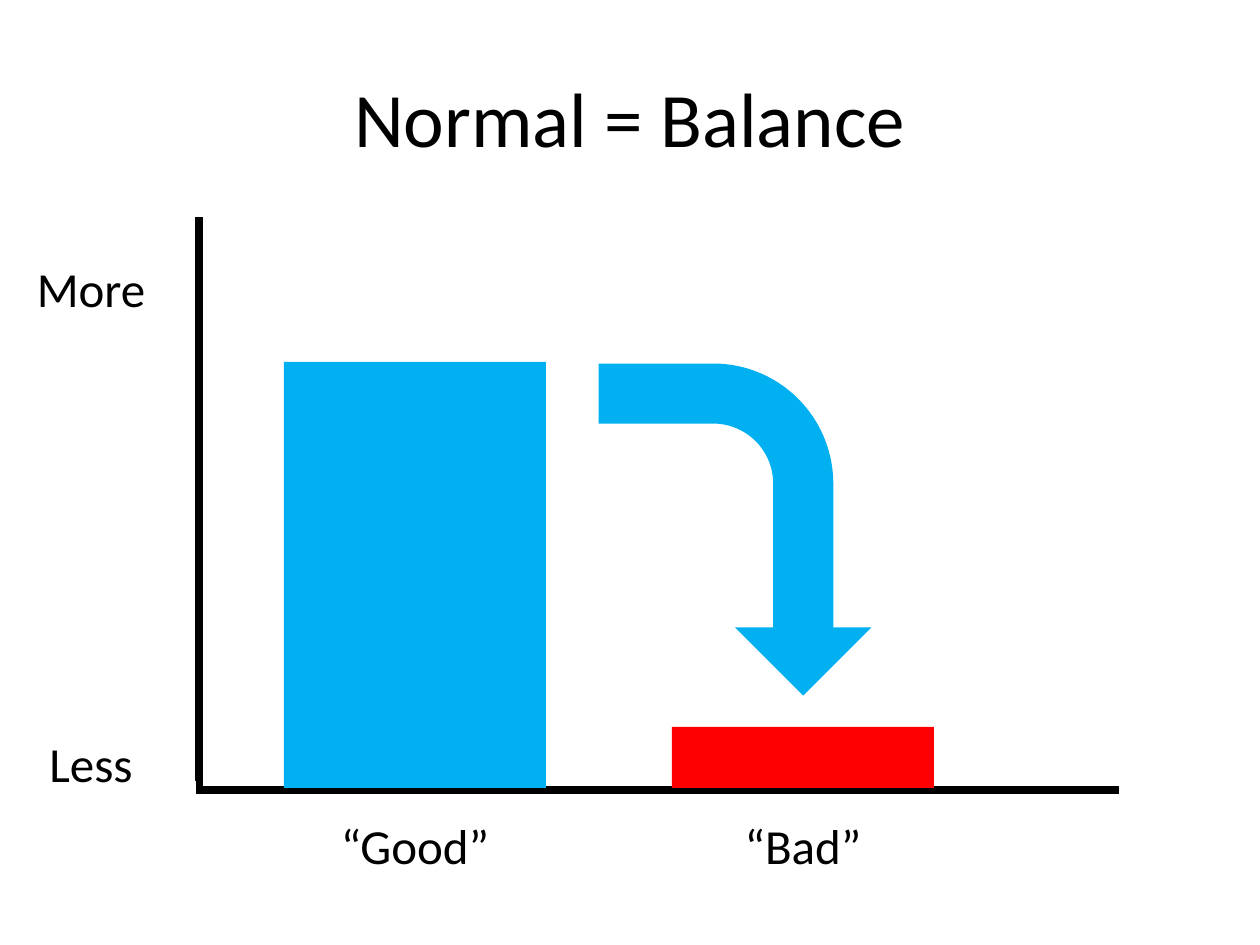
from lxml.etree import SubElement
from pptx import Presentation
from pptx.dml.color import RGBColor
from pptx.enum.shapes import MSO_CONNECTOR, MSO_SHAPE
from pptx.enum.text import MSO_ANCHOR, MSO_AUTO_SIZE, PP_ALIGN
from pptx.oxml.ns import qn
from pptx.util import Inches, Pt

COLORS = {"ink": "000000", "good": "00B0F0", "bad": "FF0000", "paper": "FFFFFF"}
PX = Inches(1) / 126


def lengths(*values):
    return [round(value * PX) for value in values]


def write(box, text, size=28, anchor=MSO_ANCHOR.TOP):
    frame = box.text_frame
    frame.word_wrap = True
    frame.vertical_anchor = anchor
    para = frame.paragraphs[0]
    para.alignment = PP_ALIGN.CENTER
    span = para.add_run()
    span.text = text
    span.font.size = Pt(size)
    span.font.name = "Calibri"
    span.font.color.rgb = RGBColor.from_string(COLORS["ink"])


deck = Presentation()
deck.slide_width, deck.slide_height = lengths(1260, 945)
page = deck.slides.add_slide(deck.slide_layouts[5])

title = page.shapes.title
title.left, title.top, title.width, title.height = lengths(63, 38, 1134, 158)
write(title, "Normal = Balance", size=44, anchor=MSO_ANCHOR.MIDDLE)

baseline = 790
bar_bottom = 788
bar_width = 262
good_left, bad_left = 284, 672

shapes = [
    (MSO_SHAPE.RECTANGLE, good_left, 362, bar_width, bar_bottom - 362, "good"),
    (MSO_SHAPE.RECTANGLE, bad_left, 727, bar_width, bar_bottom - 727, "bad"),
    (MSO_SHAPE.RECTANGLE, 158, 781, 38, 19, "paper"),
    (MSO_SHAPE.BENT_ARROW, 569, 393, 332, 273, "good"),
]
axes = [(199, 217, 199, baseline), (1119, baseline, 183, baseline)]

for ends in axes:
    axis = page.shapes.add_connector(MSO_CONNECTOR.STRAIGHT, *lengths(*ends))
    axis.line.color.rgb = RGBColor.from_string(COLORS["ink"])
    axis.line.width = Pt(4.5)
    SubElement(axis._element.spPr, qn("a:effectLst"))

for kind, left, top, width, height, color in shapes:
    shape = page.shapes.add_shape(kind, *lengths(left, top, width, height))
    shape.shadow.inherit = False
    shape.fill.solid()
    shape.fill.fore_color.rgb = RGBColor.from_string(COLORS[color])
    shape.line.fill.background()
    if kind == MSO_SHAPE.BENT_ARROW:
        shape.rotation = 90
        for index, value in enumerate([0.22, 0.25, 0.25, 0.44]):
            shape.adjustments[index] = value

labels = [
    ("“Good”", good_left, 809, bar_width),
    ("“Bad”", bad_left, 809, bar_width),
    ("Less", -1, 727, 184),
    ("More", -1, 252, 184),
]
for text, left, top, width in labels:
    box = page.shapes.add_textbox(*lengths(left, top, width, 72))
    write(box, text)
    box.text_frame.auto_size = MSO_AUTO_SIZE.SHAPE_TO_FIT_TEXT

deck.save("out.pptx")
